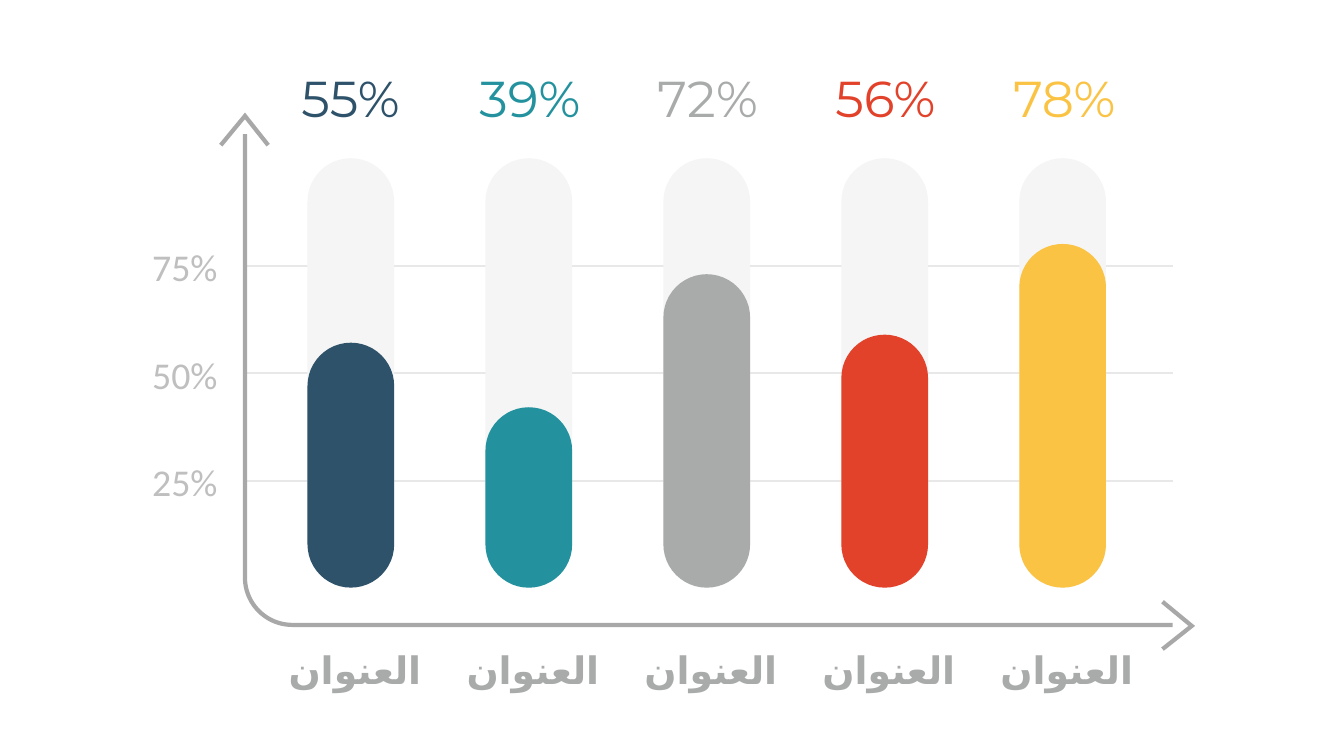
from dataclasses import dataclass
from math import cos, pi, sin

from lxml.etree import SubElement
from pptx import Presentation
from pptx.dml.color import RGBColor
from pptx.enum.lang import MSO_LANGUAGE_ID as Language
from pptx.enum.shapes import MSO_CONNECTOR as Connector, MSO_SHAPE as Shape
from pptx.enum.text import PP_ALIGN as Align
from pptx.oxml.ns import qn
from pptx.slide import Slide
from pptx.util import Inches, Pt

AXIS, GRID, TRACK = "A8A8A8", "E8E8E8", "F5F5F5"
CAPTION, TICK = "A9ABAA", "BFBFBF"
AXIS_LEFT, AXIS_RIGHT = 2.43, 11.63
AXIS_TOP, AXIS_BOTTOM = 1.33, 6.2
CORNER = 0.47
BAR_LEFT, BAR_STEP, BAR_WIDTH = 3.05, 1.765, 0.86
BAR_BOTTOM, TRACK_HEIGHT = 5.83, 4.26

Point = tuple[float, float]


@dataclass(frozen=True)
class Bar:
    value: str
    height: float
    color: str


@dataclass(frozen=True)
class TextStyle:
    font: str
    size: float
    color: str
    bold: bool = False
    align: Align = Align.LEFT
    arabic: bool = False


BARS = [
    Bar("55%", 2.43, "2F526B"),
    Bar("39%", 1.79, "23929E"),
    Bar("72%", 3.11, "A9ABAA"),
    Bar("56%", 2.51, "E2412A"),
    Bar("78%", 3.41, "FAC344"),
]
TICKS = ["75%", "50%", "25%"]


def rgb(color: str) -> RGBColor:
    return RGBColor.from_string(color)


def add_text(page: Slide, text: str, left: float, top: float,
             width: float, height: float, style: TextStyle) -> None:
    box = page.shapes.add_textbox(Inches(left), Inches(top), Inches(width), Inches(height))
    frame = box.text_frame
    frame.word_wrap = True
    frame.margin_left = frame.margin_right = frame.margin_top = frame.margin_bottom = 0
    para = frame.paragraphs[0]
    para.alignment = style.align
    span = para.add_run()
    span.text = text
    span.font.name = style.font
    span.font.size = Pt(style.size)
    span.font.bold = style.bold
    span.font.color.rgb = rgb(style.color)
    if style.arabic:
        span.font.language_id = Language.ARABIC
        SubElement(span.font._element, qn("a:cs"), typeface=style.font)


def add_grid_line(page: Slide, top: float) -> None:
    line = page.shapes.add_connector(Connector.STRAIGHT, Inches(AXIS_LEFT), Inches(top),
                                     Inches(AXIS_RIGHT), Inches(top))
    line.line.color.rgb = rgb(GRID)
    line.line.width = Pt(1.37)
    SubElement(line._element.spPr, qn("a:effectLst"))


def add_open_path(page: Slide, points: list[Point]) -> None:
    start, *rest = [(Inches(x), Inches(y)) for x, y in points]
    builder = page.shapes.build_freeform(*start)
    builder.add_line_segments(rest, close=False)
    outline = builder.convert_to_shape()
    outline.shadow.inherit = False
    outline.fill.background()
    outline.line.color.rgb = rgb(AXIS)
    outline.line.width = Pt(3)
    SubElement(outline.line._get_or_add_ln(), qn("a:miter"), lim="800000")


def add_pill(page: Slide, left: float, height: float, color: str) -> None:
    pill = page.shapes.add_shape(Shape.ROUNDED_RECTANGLE, Inches(left),
                                 Inches(BAR_BOTTOM - height), Inches(BAR_WIDTH), Inches(height))
    pill.adjustments[0] = 0.5
    pill.shadow.inherit = False
    pill.fill.solid()
    pill.fill.fore_color.rgb = rgb(color)
    pill.line.fill.background()


def add_axes(page: Slide) -> None:
    steps = 24
    angles = [pi / 2 * step / steps for step in range(steps + 1)]
    bend = [(AXIS_LEFT + CORNER * (1 - cos(angle)),
             AXIS_BOTTOM - CORNER * (1 - sin(angle))) for angle in angles]
    add_open_path(page, [(AXIS_LEFT, AXIS_TOP), *bend, (AXIS_RIGHT, AXIS_BOTTOM)])
    # Arrowheads
    add_open_path(page, [(2.19, 1.44), (AXIS_LEFT, 1.15), (2.66, 1.44)])
    add_open_path(page, [(11.53, 5.97), (11.82, 6.21), (11.53, 6.44)])


def main() -> None:
    deck = Presentation()
    deck.slide_width, deck.slide_height = Inches(13.33), Inches(7.5)
    page = deck.slides.add_slide(deck.slide_layouts[6])

    # Grid with its scale
    tick_style = TextStyle("Calibri", 27, TICK)
    for index, tick in enumerate(TICKS):
        top = 2.64 + 1.065 * index
        add_grid_line(page, top)
        add_text(page, tick, 1.51, top - 0.22, 0.9, 0.65, tick_style)
    add_axes(page)

    # Bars with value above and caption below
    caption_style = TextStyle("Calibri", 27, CAPTION, True, Align.CENTER, True)
    for index, bar in enumerate(BARS):
        left = BAR_LEFT + BAR_STEP * index
        add_pill(page, left, TRACK_HEIGHT, TRACK)
        add_pill(page, left, bar.height, bar.color)
        add_text(page, bar.value, left - 0.06, 0.67, 1.09, 0.61,
                 TextStyle("Montserrat", 36, bar.color))
        add_text(page, "العنوان", left - 0.25, 6.42, 1.44, 0.54, caption_style)

    deck.save("out.pptx")


if __name__ == "__main__":
    main()
